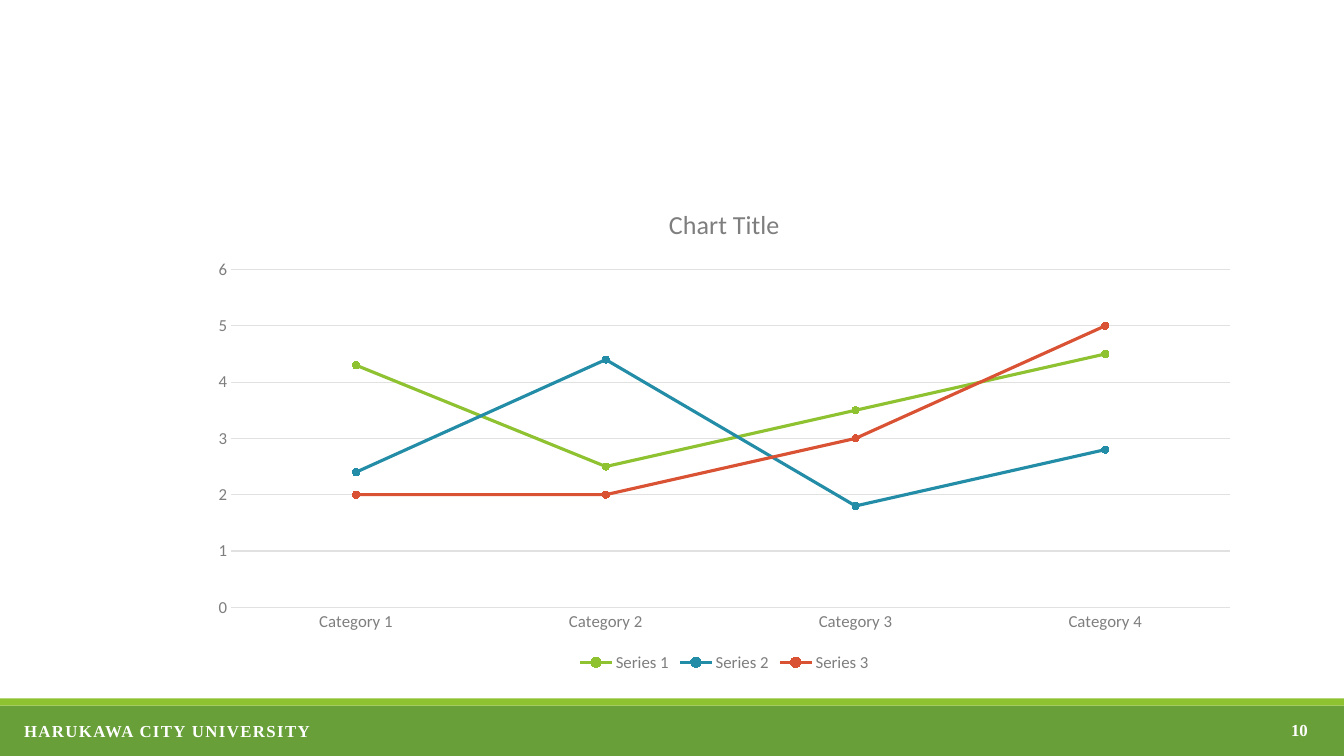
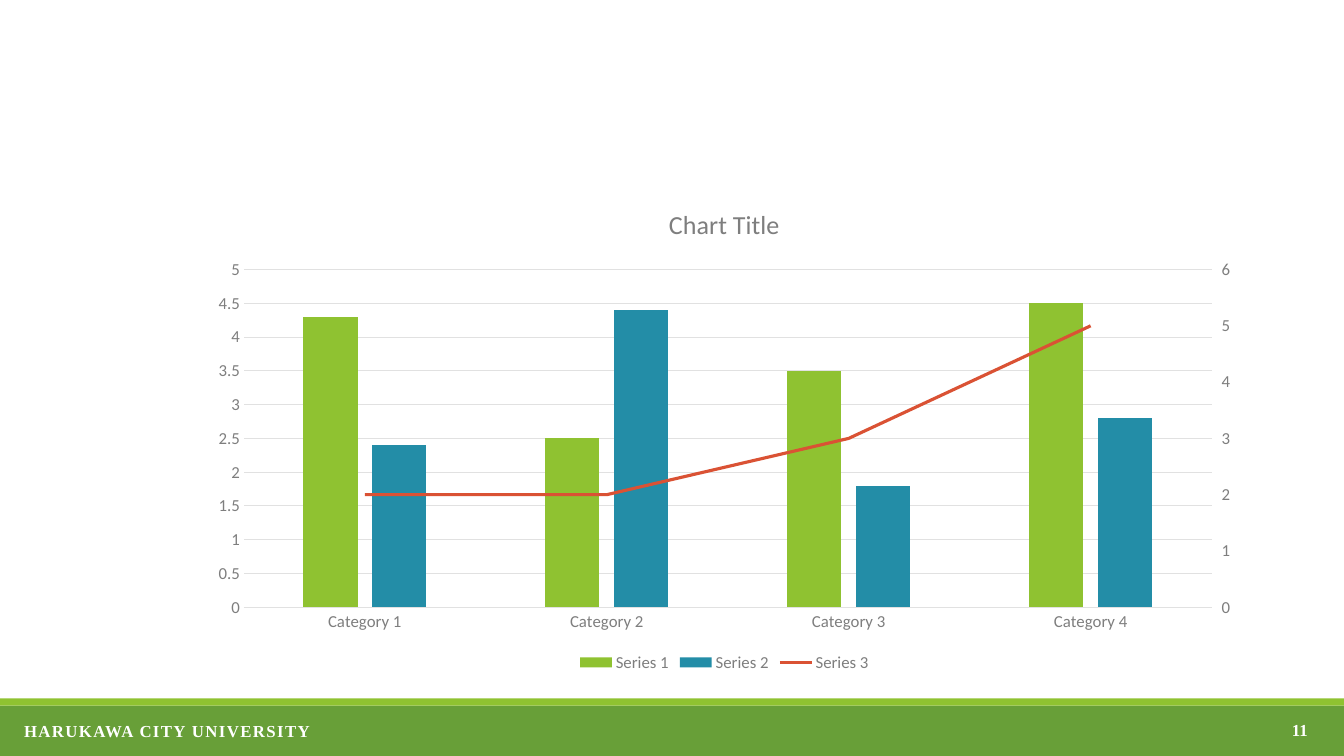
from copy import deepcopy

from pptx import Presentation
from pptx.chart.data import CategoryChartData
from pptx.dml.color import RGBColor
from pptx.enum.chart import XL_CHART_TYPE as ChartType
from pptx.enum.chart import XL_LEGEND_POSITION as LegendPosition
from pptx.enum.chart import XL_MARKER_STYLE as MarkerStyle
from pptx.enum.chart import XL_TICK_MARK as TickMark
from pptx.enum.shapes import MSO_SHAPE as ShapeType
from pptx.enum.text import MSO_ANCHOR as Anchor
from pptx.enum.text import PP_ALIGN as Align
from pptx.oxml import parse_xml
from pptx.oxml.ns import nsdecls, qn
from pptx.util import Inches, Pt

# Shared style
WHITE = RGBColor(0xFF, 0xFF, 0xFF)
DARK_GREEN = RGBColor(0x68, 0x9F, 0x38)
LIGHT_GREEN = RGBColor(0x8F, 0xC2, 0x31)
BLUE = RGBColor(0x23, 0x8D, 0xA7)
RED = RGBColor(0xDA, 0x52, 0x34)
GRAY = RGBColor(0x7E, 0x7E, 0x7E)
DARK_GRAY = RGBColor(0x38, 0x38, 0x38)
GRID_GRAY = RGBColor(0xE1, 0xE1, 0xE1)
SERIES_COLORS = (LIGHT_GREEN, BLUE, RED)
CHART_FONT = "Calibri"
FOOTER_FONT = "Times New Roman"

# Shared layout, in inches: left, top, width, height
SLIDE_WIDTH, SLIDE_HEIGHT = 13.33, 7.5
FOOTER_BOX = (0, 6.93, SLIDE_WIDTH, SLIDE_HEIGHT - 6.93)
CHART_BOX = (1.96, 1.85, 10.45, 4.86)
STRIPE_HEIGHT = 0.07

# Content
ORGANIZATION = "HARUKAWA CITY UNIVERSITY"
FIRST_PAGE = 10
CATEGORIES = [f"Category {number}" for number in range(1, 5)]
SERIES = {
    "Series 1": (4.3, 2.5, 3.5, 4.5),
    "Series 2": (2.4, 4.4, 1.8, 2.8),
    "Series 3": (2, 2, 3, 5),
}


def to_inches(box):
    return [Inches(length) for length in box]


def set_font(font, size=12, color=GRAY, name=CHART_FONT, bold=False):
    font.size, font.name, font.bold = Pt(size), name, bold
    font.color.rgb = color


def add_band(slide, box, color):
    band = slide.shapes.add_shape(ShapeType.RECTANGLE, *to_inches(box))
    band.shadow.inherit = False
    band.fill.solid()
    band.fill.fore_color.rgb = color
    band.line.fill.background()


def add_text(slide, box, text, align=Align.LEFT, anchor=Anchor.TOP, spacing=0, **font):
    frame = slide.shapes.add_textbox(*to_inches(box)).text_frame
    frame.word_wrap = True
    frame.vertical_anchor = anchor
    paragraph = frame.paragraphs[0]
    paragraph.alignment = align
    run = paragraph.add_run()
    run.text = text
    set_font(run.font, **font)
    if spacing:
        run.font._element.set("spc", str(int(spacing * 100)))


def add_footer(slide, box, page):
    left, top, width, height = box
    bar_top = top + STRIPE_HEIGHT
    add_band(slide, (left, bar_top, width, height - STRIPE_HEIGHT), DARK_GREEN)
    add_band(slide, (left, top, width, STRIPE_HEIGHT), LIGHT_GREEN)
    style = dict(color=WHITE, name=FOOTER_FONT, bold=True)
    add_text(slide, (left + 0.14, bar_top + 0.1, width - 0.85, 0.3),
             ORGANIZATION, spacing=1, **style)
    add_text(slide, (left + width - 3.26, bar_top + 0.04, 3, 0.4), str(page),
             align=Align.RIGHT, anchor=Anchor.MIDDLE, **style)


def set_line(line, color, width):
    line.color.rgb = color
    line.width = Pt(width)


def add_chart(slide, box, chart_type):
    """Add a chart of all series with the shared title, axes and legend."""
    data = CategoryChartData()
    data.categories = CATEGORIES
    for name, values in SERIES.items():
        data.add_series(name, values)
    chart = slide.shapes.add_chart(chart_type, *to_inches(box), data).chart
    set_font(chart.font, size=10, color=DARK_GRAY)

    # Title and legend
    title_frame = chart.chart_title.text_frame
    title_frame.text = "Chart Title"
    set_font(title_frame.paragraphs[0].runs[0].font, size=18.6)
    chart.has_legend = True
    chart.legend.position = LegendPosition.BOTTOM
    chart.legend.include_in_layout = False
    set_font(chart.legend.font)

    # Axes
    for axis in (chart.category_axis, chart.value_axis):
        axis.major_tick_mark = axis.minor_tick_mark = TickMark.NONE
        set_font(axis.tick_labels.font)
    set_line(chart.category_axis.format.line, GRID_GRAY, 0.75)
    chart.value_axis.format.line.fill.background()
    chart.value_axis.has_major_gridlines = True
    set_line(chart.value_axis.major_gridlines.format.line, GRID_GRAY, 0.75)
    chart.plots[0].vary_by_categories = False
    return chart


def style_line(series, color, marker_size=None):
    series.smooth = False
    set_line(series.format.line, color, 2.25)
    if marker_size is None:
        series.marker.style = MarkerStyle.NONE
        return
    series.marker.style = MarkerStyle.CIRCLE
    series.marker.size = marker_size
    series.marker.format.fill.solid()
    series.marker.format.fill.fore_color.rgb = color
    set_line(series.marker.format.line, color, 0.75)


def move_last_series_to_right_axis(chart):
    """Turn the last column series into a line on a second value axis."""
    plot_area = chart._chartSpace.chart.plotArea
    bar_chart = plot_area.find(qn("c:barChart"))
    series = bar_chart.findall(qn("c:ser"))[-1]
    for child in series.findall(qn("c:invertIfNegative")):
        series.remove(child)
    category_id, value_id = "50010", "50020"
    line_chart = parse_xml(
        f'<c:lineChart {nsdecls("c")}><c:grouping val="standard"/>'
        f'<c:varyColors val="0"/><c:marker val="1"/>'
        f'<c:axId val="{category_id}"/><c:axId val="{value_id}"/></c:lineChart>')
    line_chart.insert(2, series)
    bar_chart.addnext(line_chart)

    # Second pair of axes: visible values on the right, hidden categories
    category_axis = plot_area.find(qn("c:catAx"))
    value_axis = plot_area.find(qn("c:valAx"))
    right_axis, hidden_axis = deepcopy(value_axis), deepcopy(category_axis)
    right_axis.remove(right_axis.find(qn("c:majorGridlines")))
    settings = (
        (right_axis, dict(axId=value_id, crossAx=category_id, axPos="r",
                          majorTickMark="out", crosses="max")),
        (hidden_axis, dict(axId=category_id, crossAx=value_id, delete="1")),
    )
    for axis, values in settings:
        for tag, value in values.items():
            axis.find(qn(f"c:{tag}")).set("val", value)
    value_axis.addnext(right_axis)
    right_axis.addnext(hidden_axis)


def add_line_chart(slide, box):
    chart = add_chart(slide, box, ChartType.LINE_MARKERS)
    for series, color in zip(chart.plots[0].series, SERIES_COLORS):
        style_line(series, color, marker_size=5)


def add_combined_chart(slide, box):
    chart = add_chart(slide, box, ChartType.COLUMN_CLUSTERED)
    move_last_series_to_right_axis(chart)
    columns, lines = chart.plots
    columns.gap_width, columns.overlap = 219, -27
    for series, color in zip(columns.series, SERIES_COLORS):
        series.format.fill.solid()
        series.format.fill.fore_color.rgb = color
    style_line(lines.series[0], SERIES_COLORS[-1])


def main():
    presentation = Presentation()
    presentation.slide_width = Inches(SLIDE_WIDTH)
    presentation.slide_height = Inches(SLIDE_HEIGHT)
    blank_layout = presentation.slide_layouts[6]
    chart_builders = (add_line_chart, add_combined_chart)
    for page, build_chart in enumerate(chart_builders, start=FIRST_PAGE):
        slide = presentation.slides.add_slide(blank_layout)
        add_footer(slide, FOOTER_BOX, page)
        build_chart(slide, CHART_BOX)
    presentation.save("out.pptx")


if __name__ == "__main__":
    main()
